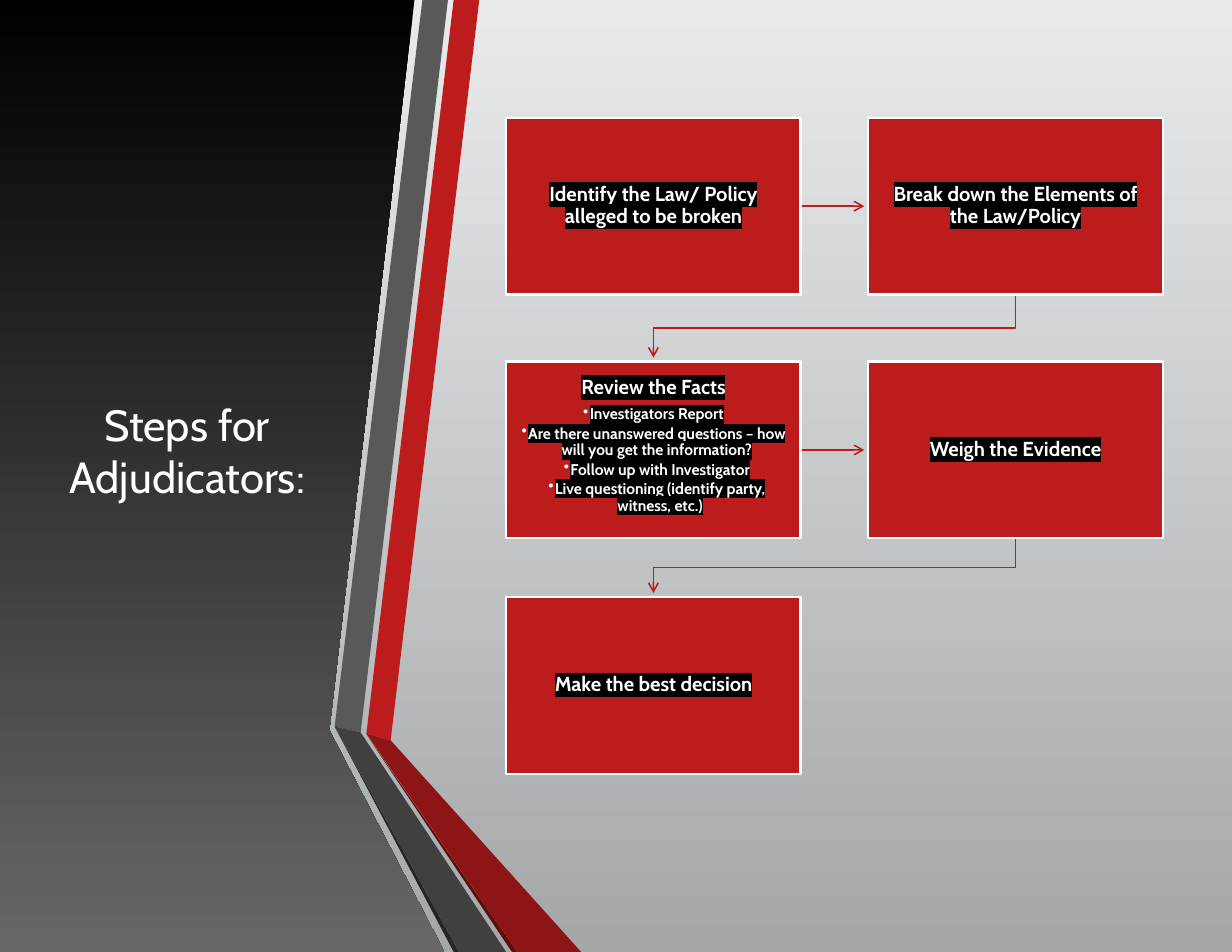
from dataclasses import dataclass

from lxml import etree
from pptx import Presentation
from pptx.dml.color import RGBColor
from pptx.enum.shapes import MSO_CONNECTOR, MSO_SHAPE
from pptx.enum.text import MSO_ANCHOR, PP_ALIGN
from pptx.oxml.ns import qn
from pptx.util import Cm, Pt

CENTER = PP_ALIGN.CENTER
MIDDLE, TOP = MSO_ANCHOR.MIDDLE, MSO_ANCHOR.TOP
RECTANGLE, STRAIGHT = MSO_SHAPE.RECTANGLE, MSO_CONNECTOR.STRAIGHT

WHITE = RGBColor(0xFF, 0xFF, 0xFF)
BLACK = RGBColor(0, 0, 0)
PALE = RGBColor(0xE9, 0xEA, 0xEB)
SILVER = RGBColor(0xA5, 0xA8, 0xA9)
PANEL_GREY = RGBColor(0x67, 0x67, 0x67)
RED = RGBColor(0xBC, 0x1C, 0x1C)
DEEP_RED = RGBColor(0x8D, 0x15, 0x15)
DARKEST_RED = RGBColor(0x5E, 0x0E, 0x0E)
GREY = RGBColor(0x59, 0x59, 0x59)
CHARCOAL = RGBColor(0x40, 0x40, 0x40)
NEAR_BLACK = RGBColor(0x26, 0x26, 0x26)

FONT = "Cabin"
PAGE_WIDTH, PAGE_HEIGHT = 27.94, 21.59

# Step grid, in centimetres
BOX_WIDTH, BOX_HEIGHT = 6.68, 4.01
COLUMNS = (11.48, 19.69)
ROWS = (2.67, 8.2, 13.54)
ARROW_GAP = 0.09
BULLET_INDENT = 0.15


@dataclass(frozen=True)
class Band:
    color: RGBColor
    points: tuple[tuple[float, float], ...]


@dataclass(frozen=True)
class Step:
    column: int
    row: int
    heading: str
    bullets: tuple[tuple[int, str], ...] = ()  # (level, wording)


PANEL = ((0, 0), (9.4, 0), (7.47, 16.56), (10.08, PAGE_HEIGHT), (0, PAGE_HEIGHT))

BANDS = (
    Band(RED, ((8.31, 16.64), (8.86, 16.79), (10.87, 0), (10.29, 0))),
    Band(GREY, ((10.16, 0), (9.58, 0), (7.59, 16.48), (8.18, 16.61))),
    Band(NEAR_BLACK, ((7.59, 16.48), (10.29, PAGE_HEIGHT), (10.41, PAGE_HEIGHT))),
    Band(DARKEST_RED, ((8.31, 16.66), (11.61, PAGE_HEIGHT), (11.73, PAGE_HEIGHT))),
    Band(DEEP_RED, ((8.31, 16.64), (11.73, PAGE_HEIGHT), (13.18, PAGE_HEIGHT),
                    (8.86, 16.79))),
    Band(CHARCOAL, ((11.48, PAGE_HEIGHT), (8.18, 16.61), (7.59, 16.48),
                    (10.41, PAGE_HEIGHT))),
)

STEPS = (
    Step(0, 0, "Identify the Law/ Policy alleged to be broken"),
    Step(1, 0, "Break down the Elements of the Law/Policy"),
    Step(0, 1, "Review the Facts", (
        (1, "Investigators Report"),
        (1, "Are there unanswered questions – how will you get the information?"),
        (2, "Follow up with Investigator"),
        (2, "Live questioning (identify party, witness, etc.)"),
    )),
    Step(1, 1, "Weigh the Evidence"),
    Step(0, 2, "Make the best decision"),
)


def set_gradient(fill, top: RGBColor, bottom: RGBColor) -> None:
    fill.gradient()
    fill.gradient_angle = 270  # counter-clockwise, so it runs downwards
    for stop, color in zip(fill.gradient_stops, (top, bottom)):
        stop.color.rgb = color


def draw_outline(shapes, points, close: bool = True):
    start, *rest = [(Cm(x), Cm(y)) for x, y in points]
    builder = shapes.build_freeform(*start)
    builder.add_line_segments(rest, close=close)
    shape = builder.convert_to_shape()
    shape.shadow.inherit = False
    return shape


def draw_band(shapes, band: Band) -> None:
    shape = draw_outline(shapes, band.points)
    shape.fill.solid()
    shape.fill.fore_color.rgb = band.color
    shape.line.fill.background()


def style_arrow(arrow) -> None:
    arrow.line.color.rgb = RED
    arrow.line.width = Pt(1)
    etree.SubElement(arrow.line._get_or_add_ln(), qn("a:tailEnd"), type="arrow")


def draw_row_arrow(shapes, row: int) -> None:
    """Arrow from the left box of a row to the right one."""
    y = Cm(ROWS[row] + BOX_HEIGHT / 2)
    arrow = shapes.add_connector(STRAIGHT, Cm(COLUMNS[0] + BOX_WIDTH), y,
                                 Cm(COLUMNS[1] - ARROW_GAP), y)
    style_arrow(arrow)
    etree.SubElement(arrow._element.spPr, qn("a:effectLst"))


def draw_return_arrow(shapes, row: int) -> None:
    """Bent arrow from the right box of a row to the left box of the next."""
    left, right = (column + BOX_WIDTH / 2 for column in COLUMNS)
    bottom, next_top = ROWS[row] + BOX_HEIGHT, ROWS[row + 1]
    middle = (bottom + next_top) / 2
    arrow = draw_outline(shapes, ((right, bottom), (right, middle), (left, middle),
                                  (left, next_top - ARROW_GAP)), close=False)
    arrow.fill.background()
    style_arrow(arrow)


def write_line(para, wording: str, size: float, space_after: float) -> None:
    para.alignment = CENTER
    para.line_spacing = 0.9
    para.space_after = Pt(space_after)
    para.font.name = FONT
    para.font.size = Pt(size)
    para.font.bold = True
    para.font.color.rgb = WHITE
    span = para.add_run()
    span.text = wording
    highlight = etree.SubElement(span._r.get_or_add_rPr(), qn("a:highlight"))
    etree.SubElement(highlight, qn("a:srgbClr"), val=str(BLACK))


def add_bullet(para, level: int) -> None:
    para.level = level
    properties = para._p.get_or_add_pPr()
    properties.set("marL", str(Cm(BULLET_INDENT * level)))
    properties.set("indent", str(-Cm(BULLET_INDENT)))
    bullet = etree.Element(qn("a:buChar"), char="•")
    properties.find(qn("a:defRPr")).addprevious(bullet)


def draw_step(shapes, step: Step) -> None:
    box = shapes.add_shape(RECTANGLE, Cm(COLUMNS[step.column]), Cm(ROWS[step.row]),
                           Cm(BOX_WIDTH), Cm(BOX_HEIGHT))
    box.shadow.inherit = False
    box.fill.solid()
    box.fill.fore_color.rgb = RED
    box.line.color.rgb = WHITE
    box.line.width = Pt(1.5)
    frame = box.text_frame
    frame.word_wrap = True
    frame.vertical_anchor = TOP if step.bullets else MIDDLE
    frame.margin_left = frame.margin_right = Cm(0.33)
    frame.margin_top = frame.margin_bottom = Cm(0.36)
    write_line(frame.paragraphs[0], step.heading, 13, 4.55)
    for level, wording in step.bullets:
        para = frame.add_paragraph()
        write_line(para, wording, 10, 1.5)
        add_bullet(para, level)


def place_title(title) -> None:
    title.left, title.top = Cm(1.22), Cm(2.16)
    title.width, title.height = Cm(6.05), Cm(16.08)
    frame = title.text_frame
    frame.text = "Steps for Adjudicators:"
    frame.word_wrap = True
    frame.vertical_anchor = MIDDLE
    para = frame.paragraphs[0]
    para.alignment = CENTER
    para.font.name = FONT
    para.font.size = Pt(28)
    para.font.color.rgb = WHITE


def main() -> None:
    deck = Presentation()
    deck.slide_width, deck.slide_height = Cm(PAGE_WIDTH), Cm(PAGE_HEIGHT)
    page = deck.slides.add_slide(deck.slide_layouts[5])
    shapes = page.shapes
    set_gradient(page.background.fill, PALE, SILVER)

    # Dark panel with the title in front of it
    panel = draw_outline(shapes, PANEL)
    set_gradient(panel.fill, BLACK, PANEL_GREY)
    panel.line.fill.background()
    place_title(shapes.title)
    panel._element.addnext(shapes.title._element)

    # Folded bands along the panel edge
    for band in BANDS:
        draw_band(shapes, band)

    # Flow of steps
    for row in (0, 1):
        draw_row_arrow(shapes, row)
        draw_return_arrow(shapes, row)
    for step in STEPS:
        draw_step(shapes, step)

    deck.save("out.pptx")


if __name__ == "__main__":
    main()
